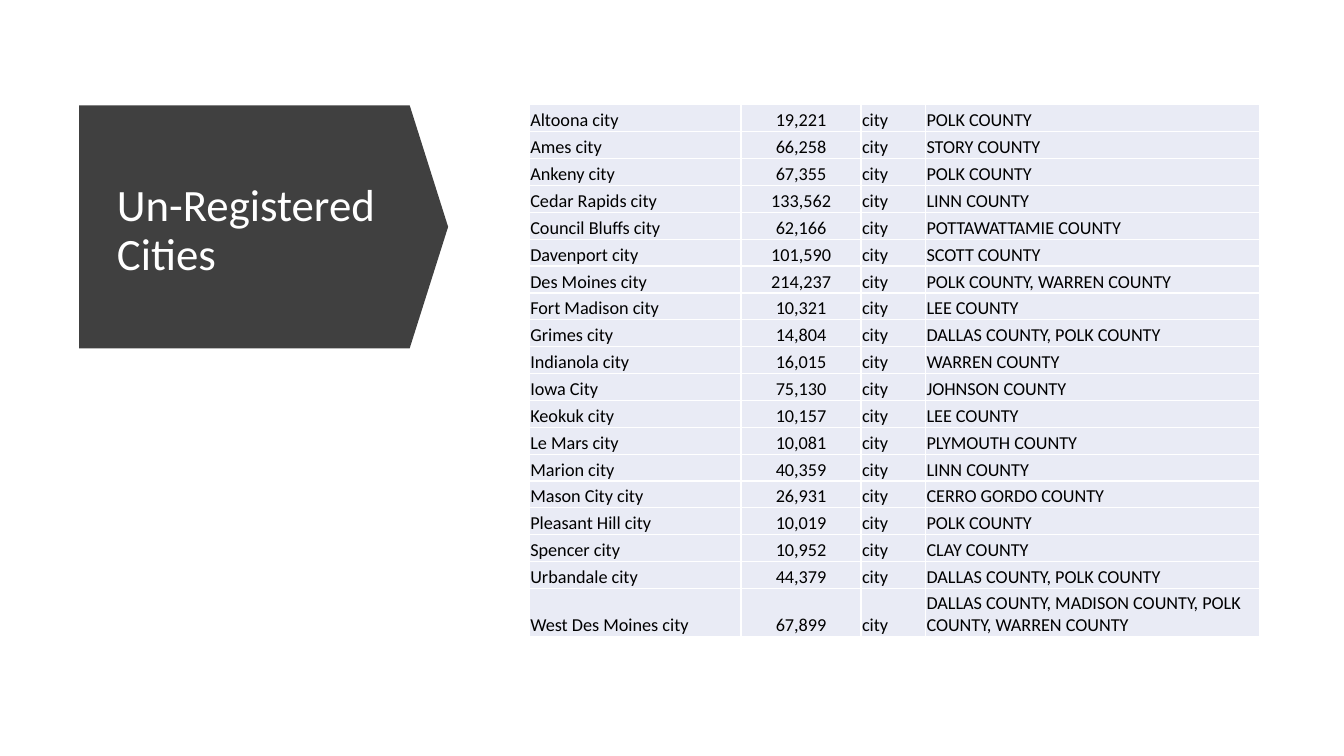
from pptx import Presentation
from pptx.dml.color import RGBColor
from pptx.enum.shapes import MSO_SHAPE
from pptx.enum.text import MSO_ANCHOR, MSO_AUTO_SIZE, PP_ALIGN
from pptx.util import Inches, Pt

TITLE = "Un-Registered Cities"
CITIES = [
    ("Altoona city", "19,221", "POLK COUNTY"),
    ("Ames city", "66,258", "STORY COUNTY"),
    ("Ankeny city", "67,355", "POLK COUNTY"),
    ("Cedar Rapids city", "133,562", "LINN COUNTY"),
    ("Council Bluffs city", "62,166", "POTTAWATTAMIE COUNTY"),
    ("Davenport city", "101,590", "SCOTT COUNTY"),
    ("Des Moines city", "214,237", "POLK COUNTY, WARREN COUNTY"),
    ("Fort Madison city", "10,321", "LEE COUNTY"),
    ("Grimes city", "14,804", "DALLAS COUNTY, POLK COUNTY"),
    ("Indianola city", "16,015", "WARREN COUNTY"),
    ("Iowa City", "75,130", "JOHNSON COUNTY"),
    ("Keokuk city", "10,157", "LEE COUNTY"),
    ("Le Mars city", "10,081", "PLYMOUTH COUNTY"),
    ("Marion city", "40,359", "LINN COUNTY"),
    ("Mason City city", "26,931", "CERRO GORDO COUNTY"),
    ("Pleasant Hill city", "10,019", "POLK COUNTY"),
    ("Spencer city", "10,952", "CLAY COUNTY"),
    ("Urbandale city", "44,379", "DALLAS COUNTY, POLK COUNTY"),
    ("West Des Moines city", "67,899",
     "DALLAS COUNTY, MADISON COUNTY, POLK COUNTY, WARREN COUNTY"),
]
KIND = "city"
COL_WIDTHS = [2.1, 1.19, 0.64, 3.31]
TABLE_HEIGHT, LAST_ROW = 5.28, 0.48
COLORS = {"arrow": "404040", "title": "FFFFFF", "cell": "E9EBF5", "text": "000000"}
FONT = "Calibri"


def style(p, size, color, align):
    p.font.name, p.font.size = FONT, Pt(size)
    p.font.color.rgb = RGBColor.from_string(COLORS[color])
    p.alignment = align


def add_title(s):
    """Fill the title placeholder and lay the arrow behind it."""
    title = s.shapes.title
    title.left, title.top = Inches(1.06), Inches(1.32)
    title.width, title.height = Inches(2.92), Inches(1.95)
    tf = title.text_frame
    tf.text = TITLE
    tf.word_wrap = True
    tf.auto_size = MSO_AUTO_SIZE.NONE
    tf.vertical_anchor = MSO_ANCHOR.MIDDLE
    p = tf.paragraphs[0]
    style(p, 32, "title", PP_ALIGN.LEFT)
    p.line_spacing = 0.9

    arrow = s.shapes.add_shape(MSO_SHAPE.DOWN_ARROW, Inches(1.41), Inches(0.42),
                               Inches(2.41), Inches(3.66))
    arrow.rotation = 270
    arrow.adjustments[0], arrow.adjustments[1] = 1, 0.158
    arrow.shadow.inherit = False
    arrow.fill.solid()
    arrow.fill.fore_color.rgb = RGBColor.from_string(COLORS["arrow"])
    arrow.line.fill.background()
    title._element.addprevious(arrow._element)


def add_city_table(s):
    table = s.shapes.add_table(len(CITIES), len(COL_WIDTHS), Inches(5.25), Inches(1.04),
                               Inches(sum(COL_WIDTHS)), Inches(TABLE_HEIGHT)).table
    table.first_row = table.horz_banding = False
    for col, width in zip(table.columns, COL_WIDTHS):
        col.width = Inches(width)
    row_height = (TABLE_HEIGHT - LAST_ROW) / (len(CITIES) - 1)
    for i, (name, population, counties) in enumerate(CITIES):
        last = i == len(CITIES) - 1
        table.rows[i].height = Inches(LAST_ROW if last else row_height)
        for j, text in enumerate((name, population, KIND, counties)):
            cell = table.cell(i, j)
            cell.text = text
            cell.vertical_anchor = MSO_ANCHOR.BOTTOM
            cell.margin_left = cell.margin_top = cell.margin_right = Inches(0.01)
            cell.margin_bottom = 0
            cell.fill.solid()
            cell.fill.fore_color.rgb = RGBColor.from_string(COLORS["cell"])
            style(cell.text_frame.paragraphs[0], 13, "text",
                  PP_ALIGN.CENTER if j == 1 else PP_ALIGN.LEFT)


def main():
    prs = Presentation()
    prs.slide_width, prs.slide_height = Inches(13.33), Inches(7.5)
    s = prs.slides.add_slide(prs.slide_layouts[5])
    add_title(s)
    add_city_table(s)
    prs.save("out.pptx")


if __name__ == "__main__":
    main()
